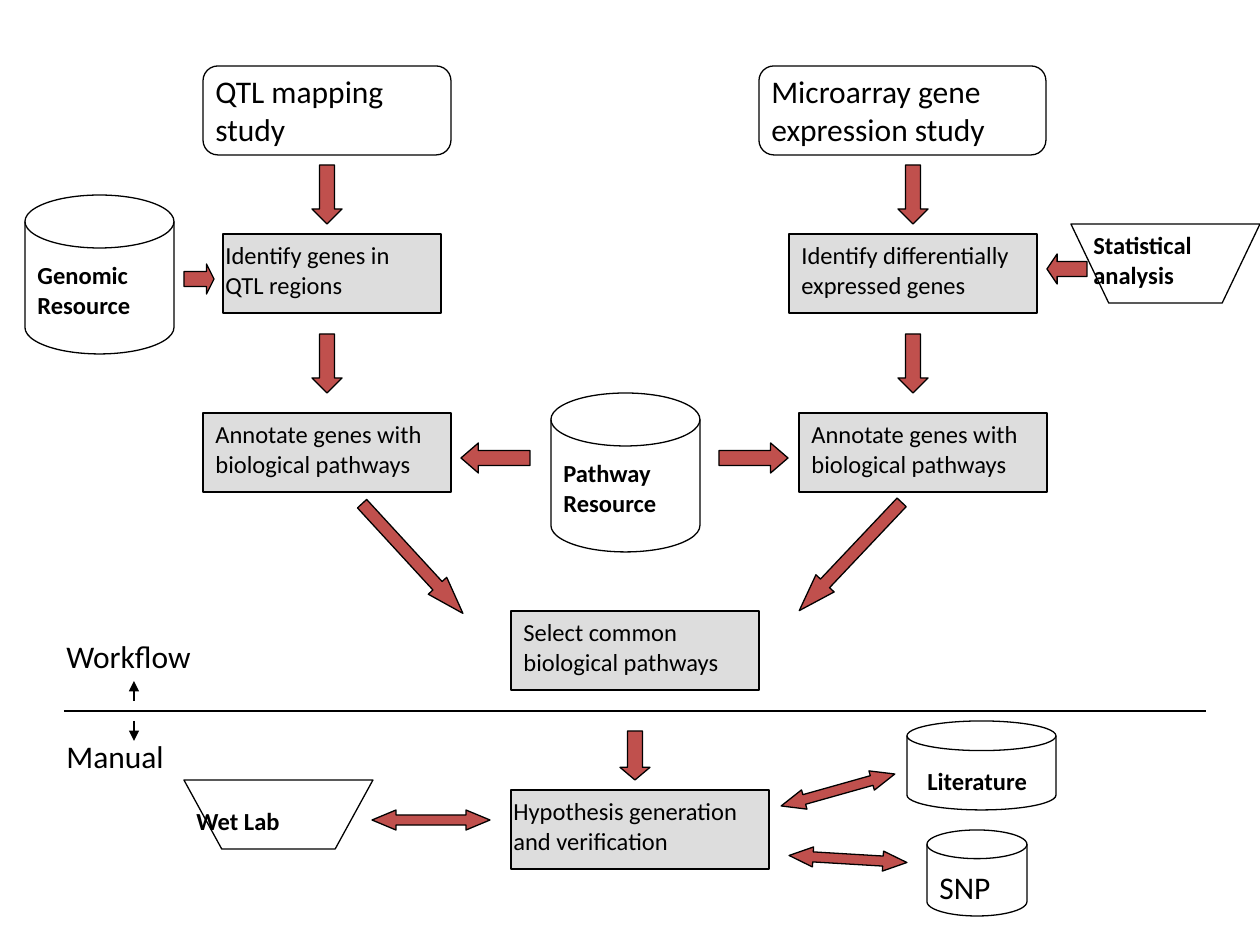
from lxml.etree import SubElement
from pptx import Presentation
from pptx.dml.color import RGBColor
from pptx.enum.shapes import MSO_CONNECTOR, MSO_SHAPE
from pptx.enum.text import MSO_ANCHOR, MSO_AUTO_SIZE, PP_ALIGN
from pptx.oxml.ns import qn
from pptx.util import Pt

PX = 914400 / 126
FONT = "Calibri"
COLORS = {"ink": "000000", "white": "FFFFFF", "step": "DDDDDD", "arrow": "C0504D"}

STUDY = MSO_SHAPE.FLOWCHART_ALTERNATE_PROCESS
STEP = MSO_SHAPE.FLOWCHART_PROCESS
RESOURCE = MSO_SHAPE.FLOWCHART_MAGNETIC_DISK
MANUAL = MSO_SHAPE.FLOWCHART_MANUAL_OPERATION
DOWN = MSO_SHAPE.DOWN_ARROW
LEFT = MSO_SHAPE.LEFT_ARROW
RIGHT = MSO_SHAPE.RIGHT_ARROW
BOTH = MSO_SHAPE.LEFT_RIGHT_ARROW

LABEL_HEIGHT = {(14, 1): 42, (14, 2): 72, (18, 1): 50, (18, 2): 88}

# kind, fill, box, text, size, bold, lines, label offset (left, top, extra width)
NODES = [
    (RESOURCE, None, (551, 393, 149, 159), "Pathway Resource", 14, True, 2, (0, 59, 10)),
    (STUDY, "white", (203, 66, 248, 89), "QTL mapping study", 18, False, 2, (0, 0, 0)),
    (STUDY, None, (759, 66, 287, 89), "Microarray gene expression study", 18, False, 2, (0, 0, 0)),
    (STEP, "step", (223, 234, 218, 79), "Identify genes in QTL regions", 14, False, 2, (-10, 0, 10)),
    (STEP, "step", (789, 234, 248, 79), "Identify differentially expressed genes", 14, False, 2, (0, 0, 0)),
    (STEP, "step", (203, 413, 248, 79), "Annotate genes with biological pathways", 14, False, 2, (0, 0, 0)),
    (STEP, "step", (799, 413, 248, 79), "Annotate genes with biological pathways", 14, False, 2, (0, 0, 0)),
    (STEP, "step", (511, 611, 248, 79), "Select common biological pathways", 14, False, 2, (0, 0, 0)),
    (STEP, "step", (511, 790, 258, 79), "Hypothesis generation and verification", 14, False, 2, (-10, 0, 19)),
    (MANUAL, None, (184, 780, 189, 69), "Wet Lab", 14, True, 1, (0, 20, 0)),
    (RESOURCE, None, (907, 721, 149, 89), "Literature", 14, True, 1, (8, 39, -8)),
    (MANUAL, None, (1071, 224, 189, 79), "Statistical analysis", 14, True, 2, (10, 0, -10)),
    (RESOURCE, "white", (25, 195, 149, 159), "Genomic Resource", 14, True, 2, (0, 59, 10)),
    (RESOURCE, None, (927, 830, 100, 86), "SNP", 18, False, 1, (0, 32, 0)),
]

ARROWS = [
    *((DOWN, (left, top, 30, 59), 0.5, 0) for left in (312, 898) for top in (165, 334)),
    (LEFT, (461, 443, 69, 30), 0.58, 0),
    (RIGHT, (719, 443, 69, 30), 0.58, 0),
    (LEFT, (338, 546, 149, 25), 1.5, 227.4),
    (LEFT, (776, 544, 149, 25), 1.5, 313.4),
    (DOWN, (620, 731, 30, 49), 0.42, 0),
    (BOTH, (372, 810, 118, 20), 1.2, 0),
    (BOTH, (779, 780, 118, 20), 1.2, 344.3),
    (RIGHT, (184, 264, 30, 30), 0.25, 0),
    (LEFT, (1047, 254, 40, 30), 0.34, 0),
    (BOTH, (789, 849, 118, 20), 1.2, 3.4),
]

ZONES = [("Workflow", (54, 631, 169, 50)), ("Manual", (54, 731, 149, 50))]
DIVIDER = (64, 711, 1206, 711)
ZONE_POINTERS = [(134, 701, 134, 681), (134, 721, 134, 741)]


def emu(lengths):
    return [round(length * PX) for length in lengths]


def color(name):
    return RGBColor.from_string(COLORS[name])


def add_outlined(slide, kind, box, fill):
    shape = slide.shapes.add_shape(kind, *emu(box))
    shape.shadow.inherit = False
    if fill:
        shape.fill.solid()
        shape.fill.fore_color.rgb = color(fill)
    else:
        shape.fill.background()
    shape.line.color.rgb = color("ink")
    shape.line.width = Pt(0.75)
    return shape


def add_label(slide, box, text, size, bold=False):
    frame = slide.shapes.add_textbox(*emu(box)).text_frame
    frame.word_wrap = True
    frame.auto_size = MSO_AUTO_SIZE.SHAPE_TO_FIT_TEXT
    frame.vertical_anchor = MSO_ANCHOR.TOP
    frame.text = text
    paragraph = frame.paragraphs[0]
    paragraph.alignment = PP_ALIGN.LEFT
    font = paragraph.runs[0].font
    font.name, font.size, font.bold = FONT, Pt(size), bold
    font.color.rgb = color("ink")


def add_line(slide, ends, arrowhead=False):
    line = slide.shapes.add_connector(MSO_CONNECTOR.STRAIGHT, *emu(ends))
    line.line.color.rgb = color("ink")
    line.line.width = Pt(0.75)
    if arrowhead:
        SubElement(line.line._get_or_add_ln(), qn("a:tailEnd"), type="triangle")
    SubElement(line._element.spPr, qn("a:effectLst"))


def main():
    deck = Presentation()
    deck.slide_width, deck.slide_height = emu((1260, 945))
    slide = deck.slides.add_slide(deck.slide_layouts[6])

    for kind, fill, box, text, size, bold, lines, (dx, dy, extra) in NODES:
        add_outlined(slide, kind, box, fill)
        left, top, width, _ = box
        label = (left + dx, top + dy, width + extra, LABEL_HEIGHT[size, lines])
        add_label(slide, label, text, size, bold)

    for kind, box, head, rotation in ARROWS:
        arrow = add_outlined(slide, kind, box, "arrow")
        arrow.adjustments[0] = 0.5
        arrow.adjustments[1] = head
        arrow.rotation = rotation

    add_line(slide, DIVIDER)
    for pointer in ZONE_POINTERS:
        add_line(slide, pointer, arrowhead=True)
    for text, box in ZONES:
        add_label(slide, box, text, 18)

    deck.save("out.pptx")


if __name__ == "__main__":
    main()
